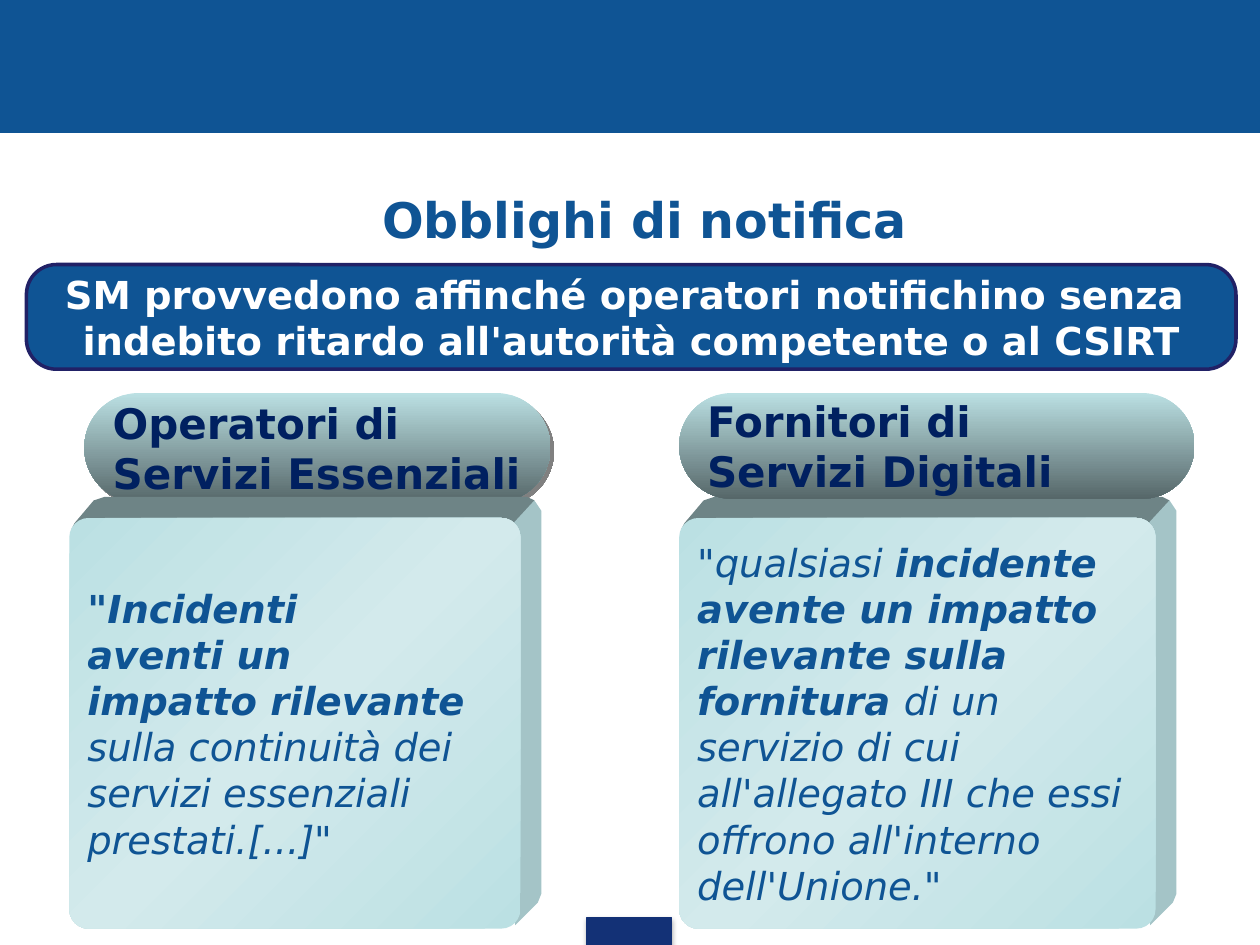
from copy import deepcopy

from lxml.etree import SubElement
from pptx import Presentation
from pptx.dml.color import RGBColor
from pptx.enum.shapes import MSO_SHAPE as Shape
from pptx.enum.text import MSO_ANCHOR as Anchor, PP_ALIGN as Align
from pptx.oxml.ns import qn
from pptx.util import Pt

BLUE = RGBColor(0x0F, 0x54, 0x94)
NAVY = RGBColor(0x00, 0x20, 0x60)
OUTLINE = RGBColor(0x21, 0x21, 0x66)
TAB_BLUE = RGBColor(0x13, 0x31, 0x76)
WHITE = RGBColor(0xFF, 0xFF, 0xFF)
BLACK = RGBColor(0x00, 0x00, 0x00)
GREY = RGBColor(0x80, 0x80, 0x80)
AQUA = RGBColor(0xBB, 0xE0, 0xE3)
PALE_AQUA = RGBColor(0xD3, 0xEA, 0xEC)
SLATE = RGBColor(0x56, 0x67, 0x69)
EDGE_TOP = RGBColor(0x6E, 0x84, 0x86)
EDGE_SIDE = RGBColor(0xA4, 0xC4, 0xC7)
FONT = "DejaVu Sans"


def add_block(page, kind, bounds, fill=None, line=None, width=0.75, corner=None):
    """Add a preset shape with an optional solid fill, outline and corner."""
    block = page.shapes.add_shape(kind, *map(Pt, bounds))
    block.shadow.inherit = False
    if fill is not None:
        block.fill.solid()
        block.fill.fore_color.rgb = fill
    if line is None:
        block.line.fill.background()
    else:
        block.line.color.rgb = line
        block.line.width = Pt(width)
    if corner is not None:
        block.adjustments[0] = corner
    return block


def set_gradient(block, colors, angle):
    """Fill a shape with evenly spaced colours at a counterclockwise angle."""
    block.fill.gradient()
    block.fill.gradient_angle = angle
    stop_list = block._element.spPr.find(qn("a:gradFill")).find(qn("a:gsLst"))
    while len(stop_list) < len(colors):
        stop_list.append(deepcopy(stop_list[-1]))
    for index, (stop, color) in enumerate(zip(block.fill.gradient_stops, colors)):
        stop.position = index / (len(colors) - 1)
        stop.color.rgb = color


def add_shadow(block, color, distance, degrees, blur=0, opacity=100):
    """Give a shape an outer shadow."""
    effects = block._element.spPr.find(qn("a:effectLst"))
    shadow = SubElement(
        effects, qn("a:outerShdw"), blurRad=str(Pt(blur)), dist=str(Pt(distance)),
        dir=str(degrees * 60000), algn="ctr", rotWithShape="0")
    tint = SubElement(shadow, qn("a:srgbClr"), val=str(color))
    SubElement(tint, qn("a:alpha"), val=str(opacity * 1000))


def write_text(box, pieces, size, color, align=Align.LEFT, italic=False, wrap=False):
    """Write (text, bold) pieces into one paragraph, with line breaks."""
    frame = box.text_frame
    frame.word_wrap = wrap
    frame.vertical_anchor = Anchor.MIDDLE
    para = frame.paragraphs[0]
    para.alignment = align
    for text, bold in pieces:
        for index, part in enumerate(text.split("\n")):
            if index:
                para.add_line_break()
            if part:
                span = para.add_run()
                span.text = part
                span.font.name = FONT
                span.font.size = Pt(size)
                span.font.bold = bold
                span.font.italic = italic
                span.font.color.rgb = color


def add_face(page, points, color):
    """Add a filled polygon without an outline."""
    builder = page.shapes.build_freeform(*map(Pt, points[0]))
    builder.add_line_segments([(Pt(x), Pt(y)) for x, y in points[1:]])
    face = builder.convert_to_shape()
    face.shadow.inherit = False
    face.fill.solid()
    face.fill.fore_color.rgb = color
    face.line.fill.background()


def add_card(page, bounds, pieces):
    """Add a raised card with its top and right edges and quoted text."""
    left, top, width, height = bounds
    right, bottom, depth = left + width, top + height, 12
    add_face(page, [(left + 1, top + 7), (left + 3, top + 3), (left + 14, top - 10),
                    (left + 20, top - depth), (right + 4, top - depth),
                    (right + 8, top - 10), (right, top + 8)], EDGE_TOP)
    add_face(page, [(right - 4, top + 3), (right + 8, top - 10),
                    (right + depth, top - 4), (right + depth, bottom - 20),
                    (right + 10, bottom - 15), (right - 3, bottom - 2)], EDGE_SIDE)
    card = add_block(page, Shape.ROUNDED_RECTANGLE, bounds, corner=0.047)
    set_gradient(card, [AQUA, PALE_AQUA, AQUA], 315)
    write_text(card, pieces, 22, BLUE, italic=True)


def add_pill(page, bounds, text):
    """Add a rounded heading with a vertical gradient."""
    pill = add_block(page, Shape.ROUNDED_RECTANGLE, bounds, corner=0.5)
    set_gradient(pill, [AQUA, SLATE], 270)
    write_text(pill, [(text, True)], 24, NAVY)
    return pill


def main():
    """Build the slide and save it."""
    deck = Presentation()
    deck.slide_width, deck.slide_height = Pt(720), Pt(540)
    page = deck.slides.add_slide(deck.slide_layouts[6])

    add_block(page, Shape.RECTANGLE, (0, 0, 720, 75.6), BLUE, BLUE)
    footer_tab = add_block(page, Shape.RECTANGLE, (335.5, 524.2, 48.2, 15.8),
                           TAB_BLUE, TAB_BLUE)
    add_shadow(footer_tab, BLACK, 1.8, 90, blur=3.1, opacity=35)

    title = page.shapes.add_textbox(Pt(31), Pt(82.8), Pt(674.6), Pt(85))
    write_text(title, [("Obblighi di notifica", True)], 28, BLUE, Align.CENTER, wrap=True)

    banner = add_block(page, Shape.ROUNDED_RECTANGLE, (15.1, 151.2, 691.2, 59.8),
                       BLUE, OUTLINE, 2, 0.287)
    write_text(banner, [("SM provvedono affinché operatori notifichino senza \n"
                         "indebito ritardo all'autorità competente o al CSIRT", True)],
               22, WHITE, Align.CENTER)

    operators = add_pill(page, (48.2, 224.6, 266.4, 62.6),
                         "Operatori di \nServizi Essenziali")
    add_shadow(operators, GREY, 2.8, 45)
    add_card(page, (39.6, 296, 257.8, 234.7), [
        ("\"Incidenti \naventi un \nimpatto rilevante\n", True),
        ("sulla continuità dei\nservizi essenziali \nprestati.[...]\"", False)])

    add_card(page, (388.1, 296, 272.2, 234.7), [
        ("\"qualsiasi ", False),
        ("incidente \navente un impatto \nrilevante sulla \nfornitura ", True),
        ("di un \nservizio di cui \nall'allegato III che essi \n"
         "offrono all'interno \ndell'Unione.\"", False)])
    add_pill(page, (388.1, 224.6, 294.5, 60.5), "Fornitori di \nServizi Digitali")

    deck.save("out.pptx")


if __name__ == "__main__":
    main()
